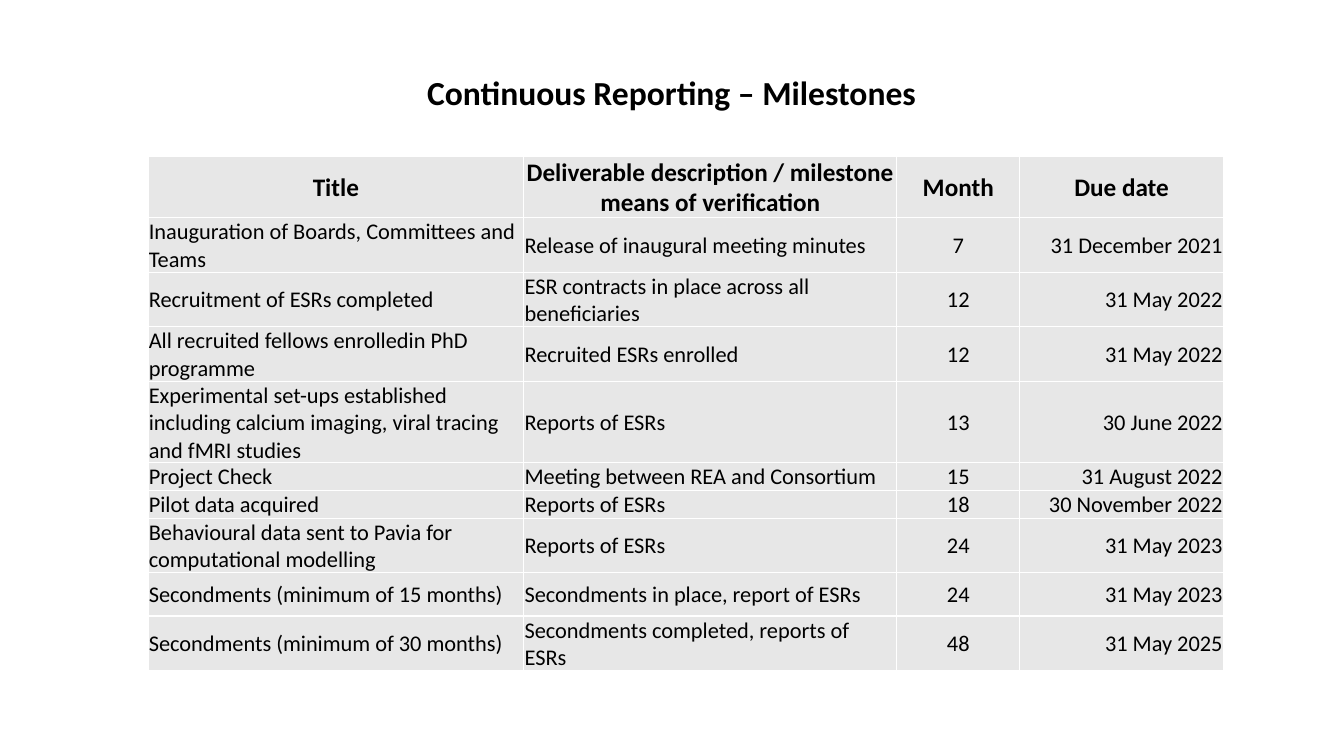
from lxml import etree
from pptx import Presentation
from pptx.dml.color import RGBColor
from pptx.enum.text import MSO_ANCHOR, MSO_AUTO_SIZE, PP_ALIGN
from pptx.oxml.ns import qn
from pptx.util import Cm, Pt

LEFT, CENTER, RIGHT = PP_ALIGN.LEFT, PP_ALIGN.CENTER, PP_ALIGN.RIGHT
MIDDLE = MSO_ANCHOR.MIDDLE
FIT_SHAPE = MSO_AUTO_SIZE.SHAPE_TO_FIT_TEXT

COLORS = {"text": "000000", "cell": "E7E7E7", "border": "FFFFFF"}
TITLE_FONT = {"name": "Calibri", "size": Pt(24), "bold": True}
HEADER_FONT = {"name": "Calibri", "size": Pt(18), "bold": True}
BODY_FONT = {"name": "Calibri", "size": Pt(16), "bold": False}
CELL_FORMAT = {
    "vertical_anchor": MIDDLE,
    "margin_left": Cm(0.02),
    "margin_right": Cm(0.02),
    "margin_top": Cm(0.02),
    "margin_bottom": Cm(0),
}

COLUMN_WIDTHS = [9.47, 9.4, 3.1, 5.13]
COLUMN_ALIGNS = [LEFT, LEFT, CENTER, RIGHT]
ROW_HEIGHTS = [1.09, 1.09, 1.09, 1.09, 1.65, 0.56, 0.56, 1.09, 1.09, 1.12]
HEADERS = ("Title", "Deliverable description / milestone means of verification",
           "Month", "Due date")
MILESTONES = [
    ("Inauguration of Boards, Committees and Teams",
     "Release of inaugural meeting minutes", "7", "31 December 2021"),
    ("Recruitment of ESRs completed",
     "ESR contracts in place across all beneficiaries", "12", "31 May 2022"),
    ("All recruited fellows enrolledin PhD programme",
     "Recruited ESRs enrolled", "12", "31 May 2022"),
    ("Experimental set-ups established including calcium imaging, "
     "viral tracing and fMRI studies",
     "Reports of ESRs", "13", "30 June 2022"),
    ("Project Check", "Meeting between REA and Consortium", "15", "31 August 2022"),
    ("Pilot data acquired", "Reports of ESRs", "18", "30 November 2022"),
    ("Behavioural data sent to Pavia for computational modelling",
     "Reports of ESRs", "24", "31 May 2023"),
    ("Secondments (minimum of 15 months)",
     "Secondments in place, report of ESRs", "24", "31 May 2023"),
    ("Secondments (minimum of 30 months)",
     "Secondments completed, reports of ESRs", "48", "31 May 2025"),
]


def apply_format(target, values):
    for name, value in values.items():
        setattr(target, name, value)


def write_text(tf, text, font, align):
    p = tf.paragraphs[0]
    p.alignment = align
    r = p.add_run()
    r.text = text
    apply_format(r.font, font)
    r.font.color.rgb = RGBColor.from_string(COLORS["text"])


def add_borders(cell):
    # Borders come before the fill in the cell properties
    tc_pr = cell._tc.get_or_add_tcPr()
    for side in ("a:lnL", "a:lnR", "a:lnT", "a:lnB"):
        ln = etree.SubElement(tc_pr, qn(side), w=str(Pt(1)))
        fill = etree.SubElement(ln, qn("a:solidFill"))
        etree.SubElement(fill, qn("a:srgbClr"), val=COLORS["border"])


def fill_cell(cell, text, font, align):
    apply_format(cell, CELL_FORMAT)
    add_borders(cell)
    cell.fill.solid()
    cell.fill.fore_color.rgb = RGBColor.from_string(COLORS["cell"])
    write_text(cell.text_frame, text, font, align)


def add_title(slide, left, top, width, height):
    sp = slide.shapes.add_textbox(left, top, width, height)
    tf = sp.text_frame
    tf.word_wrap = True
    tf.auto_size = FIT_SHAPE
    write_text(tf, "Continuous Reporting – Milestones", TITLE_FONT, CENTER)


def add_milestone_table(slide, left, top, width, height):
    rows = [HEADERS] + MILESTONES
    frame = slide.shapes.add_table(len(rows), len(HEADERS), left, top, width, height)
    table = frame.table
    table.horz_banding = False
    for column, column_width in zip(table.columns, COLUMN_WIDTHS):
        column.width = Cm(column_width)
    for row, row_height in zip(table.rows, ROW_HEIGHTS):
        row.height = Cm(row_height)
    # Rows grow with their text to fill the frame
    frame.height = height

    for i, texts in enumerate(rows):
        for j, text in enumerate(texts):
            font = BODY_FONT if i else HEADER_FONT
            align = COLUMN_ALIGNS[j] if i else CENTER
            fill_cell(table.cell(i, j), text, font, align)


def main():
    prs = Presentation()
    prs.slide_width, prs.slide_height = Cm(33.87), Cm(19.05)
    slide = prs.slides.add_slide(prs.slide_layouts[6])
    add_title(slide, Cm(9.47), Cm(1.7), Cm(14.91), Cm(1.27))
    add_milestone_table(slide, Cm(3.73), Cm(3.94), Cm(27.1), Cm(12.95))
    prs.save("out.pptx")


if __name__ == "__main__":
    main()
